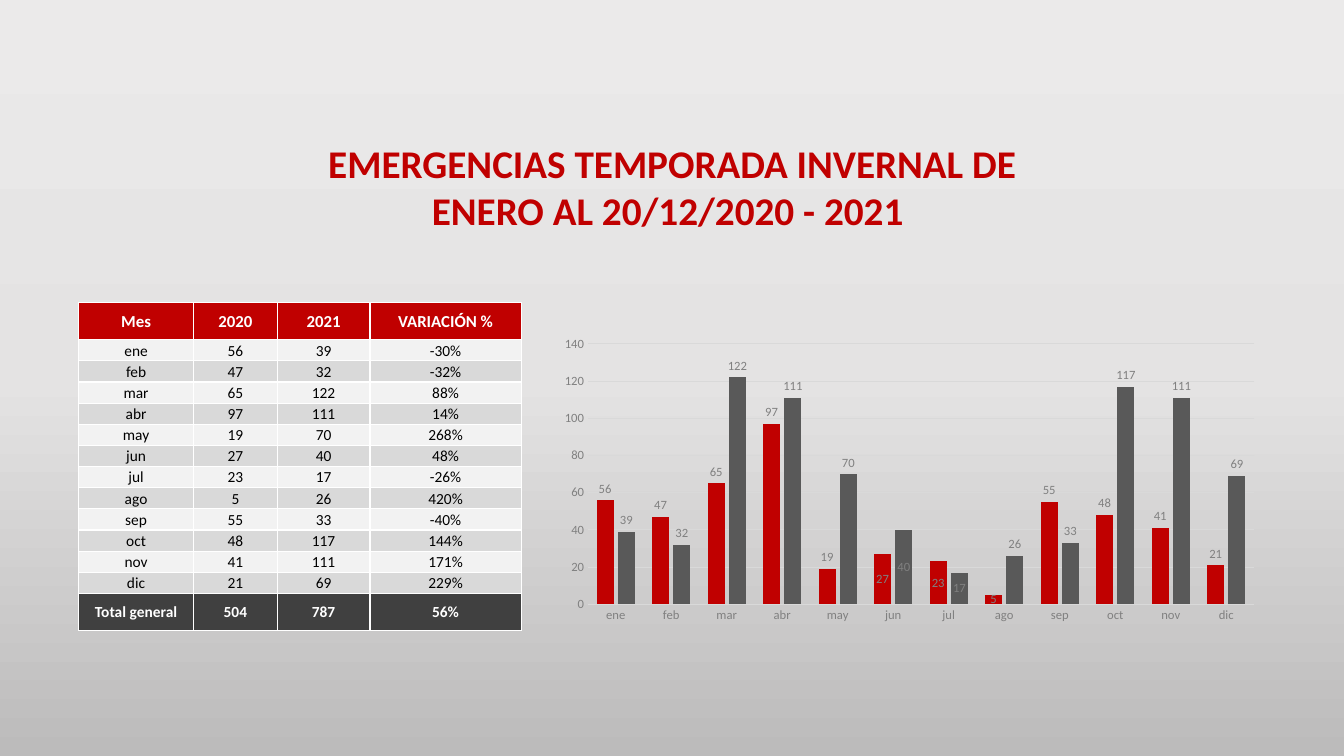
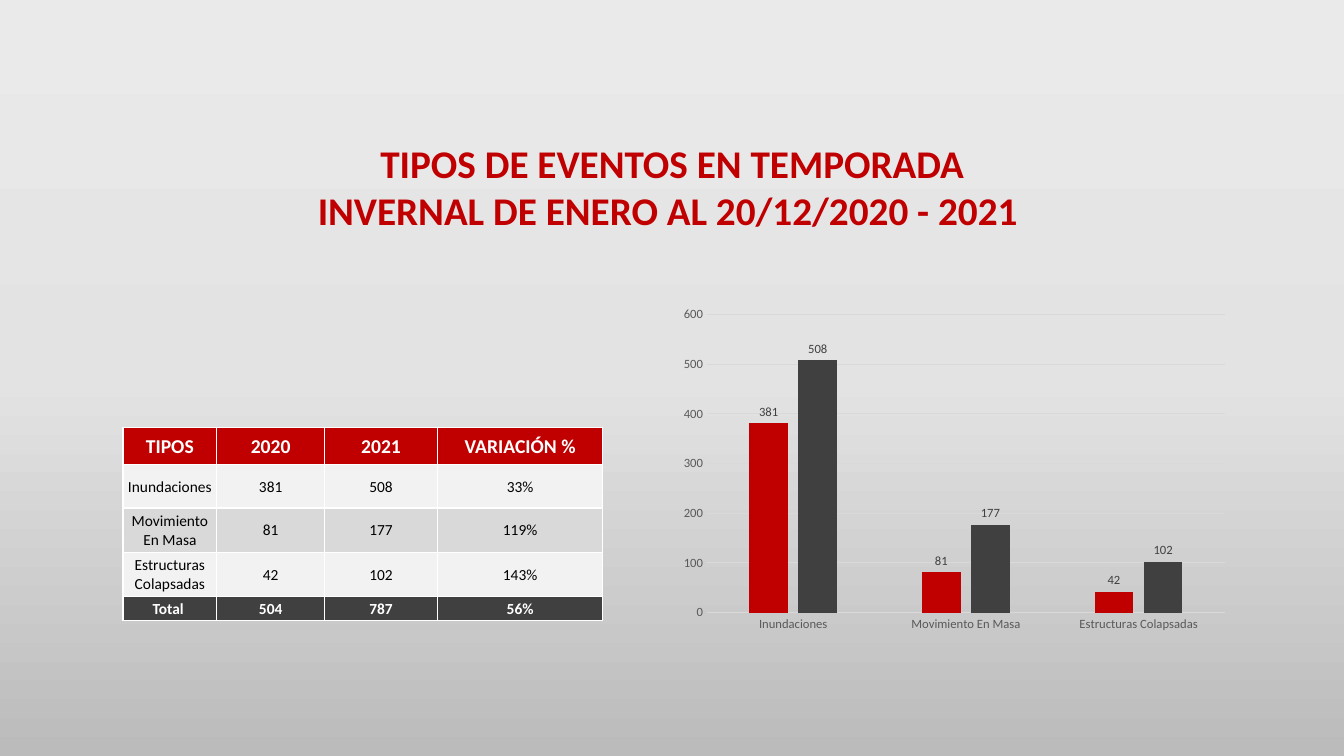
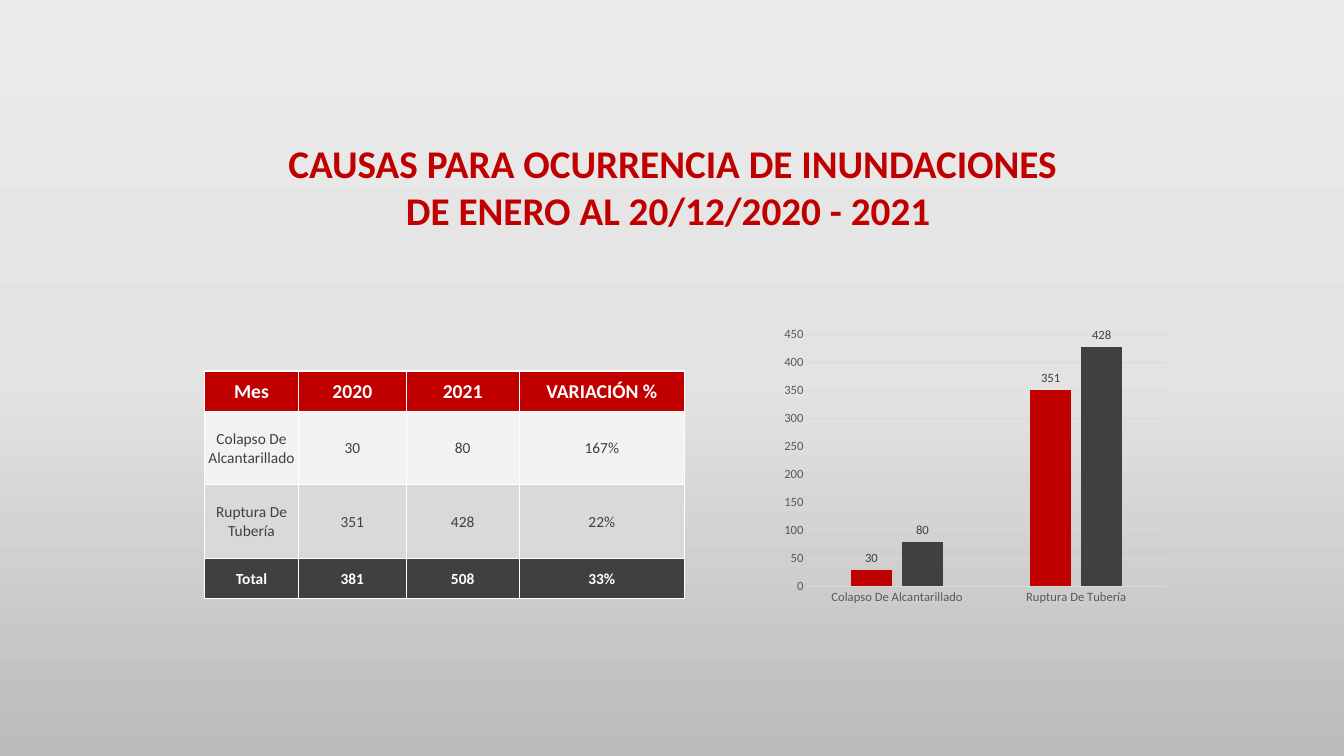
import copy

import pptx
import pptx.chart.data
import pptx.dml.color
import pptx.enum.chart
import pptx.enum.text
import pptx.oxml
import pptx.oxml.ns
import pptx.util
from pptx.util import Inches

COLORS = {
    "red": "C00000",
    "dark": "404040",
    "gray": "595959",
    "soft": "808080",
    "grid": "D9D9D9",
    "light": "F2F2F2",
    "white": "FFFFFF",
    "black": "000000",
    "bg_top": "EBEAEA",
    "bg_mid": "E4E3E3",
    "bg_end": "BCBBBB",
}
FONT = "Calibri"
YEARS = ["2020", "2021"]
TYPE_COLS = [0.93, 1.07, 1.12, 1.64]

MONTHS = [
    ("ene", 56, 39), ("feb", 47, 32), ("mar", 65, 122), ("abr", 97, 111),
    ("may", 19, 70), ("jun", 27, 40), ("jul", 23, 17), ("ago", 5, 26),
    ("sep", 55, 33), ("oct", 48, 117), ("nov", 41, 111), ("dic", 21, 69),
]
EVENTS = [
    ("Inundaciones", 381, 508),
    ("Movimiento En Masa", 81, 177),
    ("Estructuras Colapsadas", 42, 102),
]
CAUSES = [
    ("Colapso De Alcantarillado", 30, 80),
    ("Ruptura De Tubería", 351, 428),
]


def rgb(name):
    return pptx.dml.color.RGBColor.from_string(COLORS[name])


def style_font(font, size, color, bold=False):
    font.name = FONT
    font.size = pptx.util.Pt(size)
    font.bold = bold
    font.color.rgb = rgb(color)


def write(tf, text, size, color, bold=False):
    p = tf.paragraphs[0]
    p.alignment = pptx.enum.text.PP_ALIGN.CENTER
    r = p.add_run()
    r.text = text
    style_font(r.font, size, color, bold)


def set_background(master):
    fill = master.background.fill
    fill.gradient()
    fill.gradient_angle = 270
    stops = master.element.xpath("p:cSld/p:bg//a:gsLst")[0]
    stops.insert(1, copy.deepcopy(stops[0]))
    for stop, pos, color in zip(fill.gradient_stops, (0, 0.5, 1), ("bg_top", "bg_mid", "bg_end")):
        stop.position = pos
        stop.color.rgb = rgb(color)


def add_title(slide, text, left, width):
    sp = slide.shapes.add_textbox(Inches(left), Inches(1.33), Inches(width), Inches(1.04))
    sp.text_frame.word_wrap = True
    write(sp.text_frame, text, 28, "red", True)


def add_borders(cell):
    tc_pr = cell._tc.get_or_add_tcPr()
    for i, side in enumerate(("lnL", "lnR", "lnT", "lnB")):
        tc_pr.insert(i, pptx.oxml.parse_xml(
            f'<a:{side} {pptx.oxml.ns.nsdecls("a")} w="12700"><a:solidFill>'
            f'<a:srgbClr val="{COLORS["white"]}"/></a:solidFill></a:{side}>'))


def fill_cell(cell, text, fill, size, color, bold):
    cell.margin_left = cell.margin_right = cell.margin_top = Inches(0.01)
    cell.margin_bottom = 0
    cell.vertical_anchor = pptx.enum.text.MSO_ANCHOR.MIDDLE
    cell.fill.solid()
    cell.fill.fore_color.rgb = rgb(fill)
    add_borders(cell)
    write(cell.text_frame, text, size, color, bold)


def with_variation(label, before, after):
    return [label, str(before), str(after), f"{(after / before - 1) * 100:.0f}%"]


def add_comparison_table(slide, data, pos, cols, heights, head, total,
                         head_size=14, body_color="black"):
    sums = [sum(row[i] for row in data) for i in (1, 2)]
    rows = [[head, *YEARS, "VARIACIÓN %"]]
    rows += [with_variation(*row) for row in data]
    rows.append(with_variation(total, *sums))
    left, top = pos
    table = slide.shapes.add_table(
        len(rows), len(cols), Inches(left), Inches(top),
        Inches(sum(cols)), Inches(sum(heights))).table
    table.first_row = table.horz_banding = False
    for col, width in zip(table.columns, cols):
        col.width = Inches(width)
    for i, (texts, height) in enumerate(zip(rows, heights)):
        table.rows[i].height = Inches(height)
        if i == 0:
            look = ("red", head_size, "white", True)
        elif i == len(rows) - 1:
            look = ("dark", 11, "white", True)
        else:
            look = ("light" if i % 2 else "grid", 11, body_color, False)
        for j, text in enumerate(texts):
            fill_cell(table.cell(i, j), text, *look)


def style_line(line, color):
    line.color.rgb = rgb(color)
    line.width = pptx.util.Pt(0.75)


def style_axes(chart, color, top, step):
    for axis in (chart.category_axis, chart.value_axis):
        axis.major_tick_mark = pptx.enum.chart.XL_TICK_MARK.NONE
        axis.minor_tick_mark = pptx.enum.chart.XL_TICK_MARK.NONE
        style_font(axis.tick_labels.font, 9, color)
    style_line(chart.category_axis.format.line, "grid")
    value = chart.value_axis
    value.minimum_scale, value.maximum_scale, value.major_unit = 0, top, step
    value.format.line.fill.background()
    value.has_major_gridlines = True
    style_line(value.major_gridlines.format.line, "grid")


def add_column_chart(slide, data, box, top, step, gap=219, overlap=-27, second="dark",
                     axis_color="gray", label_color="dark", centered=((), ())):
    cd = pptx.chart.data.CategoryChartData()
    cd.categories = [row[0] for row in data]
    for i, year in enumerate(YEARS, 1):
        cd.add_series(year, [row[i] for row in data])
    chart = slide.shapes.add_chart(
        pptx.enum.chart.XL_CHART_TYPE.COLUMN_CLUSTERED, *map(Inches, box), cd).chart
    chart.has_legend = chart.has_title = False
    style_font(chart.font, 10, "black")
    style_axes(chart, axis_color, top, step)
    plot = chart.plots[0]
    plot.gap_width, plot.overlap = gap, overlap
    plot.vary_by_categories = False
    position = pptx.enum.chart.XL_LABEL_POSITION
    for series, color, inside in zip(plot.series, ("red", second), centered):
        series.format.fill.solid()
        series.format.fill.fore_color.rgb = rgb(color)
        labels = series.data_labels
        labels.show_value = True
        labels.position = position.OUTSIDE_END
        style_font(labels.font, 9, label_color)
        for i in inside:
            label = series.points[i].data_label
            style_font(label.font, 9, label_color)
            label.position = position.CENTER


def main():
    prs = pptx.Presentation()
    prs.slide_width, prs.slide_height = Inches(13.33), Inches(7.5)
    set_background(prs.slide_master)
    blank = prs.slide_layouts[6]

    s = prs.slides.add_slide(blank)
    add_column_chart(s, MONTHS, (5.46, 3.28, 7.12, 2.96), 140, 20, gap=100, overlap=-24,
                     second="gray", axis_color="soft", label_color="soft",
                     centered=((5, 6, 7), (5, 6)))
    add_comparison_table(s, MONTHS, (0.78, 3), [1.14, 0.83, 0.92, 1.5],
                         [0.37] + [0.21] * 12 + [0.37], "Mes", "Total general", head_size=12)
    add_title(s, "EMERGENCIAS TEMPORADA INVERNAL DE ENERO AL 20/12/2020 - 2021 ", 2.97, 7.39)

    s = prs.slides.add_slide(blank)
    add_column_chart(s, EVENTS, (6.67, 2.98, 5.59, 3.35), 600, 100)
    add_comparison_table(s, EVENTS, (1.22, 4.24), TYPE_COLS,
                         [0.37, 0.43, 0.44, 0.44, 0.24], "TIPOS", "Total ")
    add_title(s, "TIPOS DE EVENTOS EN TEMPORADA INVERNAL DE ENERO AL 20/12/2020 - 2021 ", 2.97, 7.39)

    s = prs.slides.add_slide(blank)
    add_title(s, "CAUSAS PARA OCURRENCIA DE INUNDACIONES DE ENERO AL 20/12/2020 - 2021 ", 2.56, 8.22)
    add_column_chart(s, CAUSES, (7.7, 3.19, 3.94, 2.87), 450, 50)
    add_comparison_table(s, CAUSES, (2.03, 3.68), TYPE_COLS, [0.4, 0.73, 0.73, 0.4],
                         "Mes", "Total", body_color="dark")

    prs.save("out.pptx")


if __name__ == "__main__":
    main()
